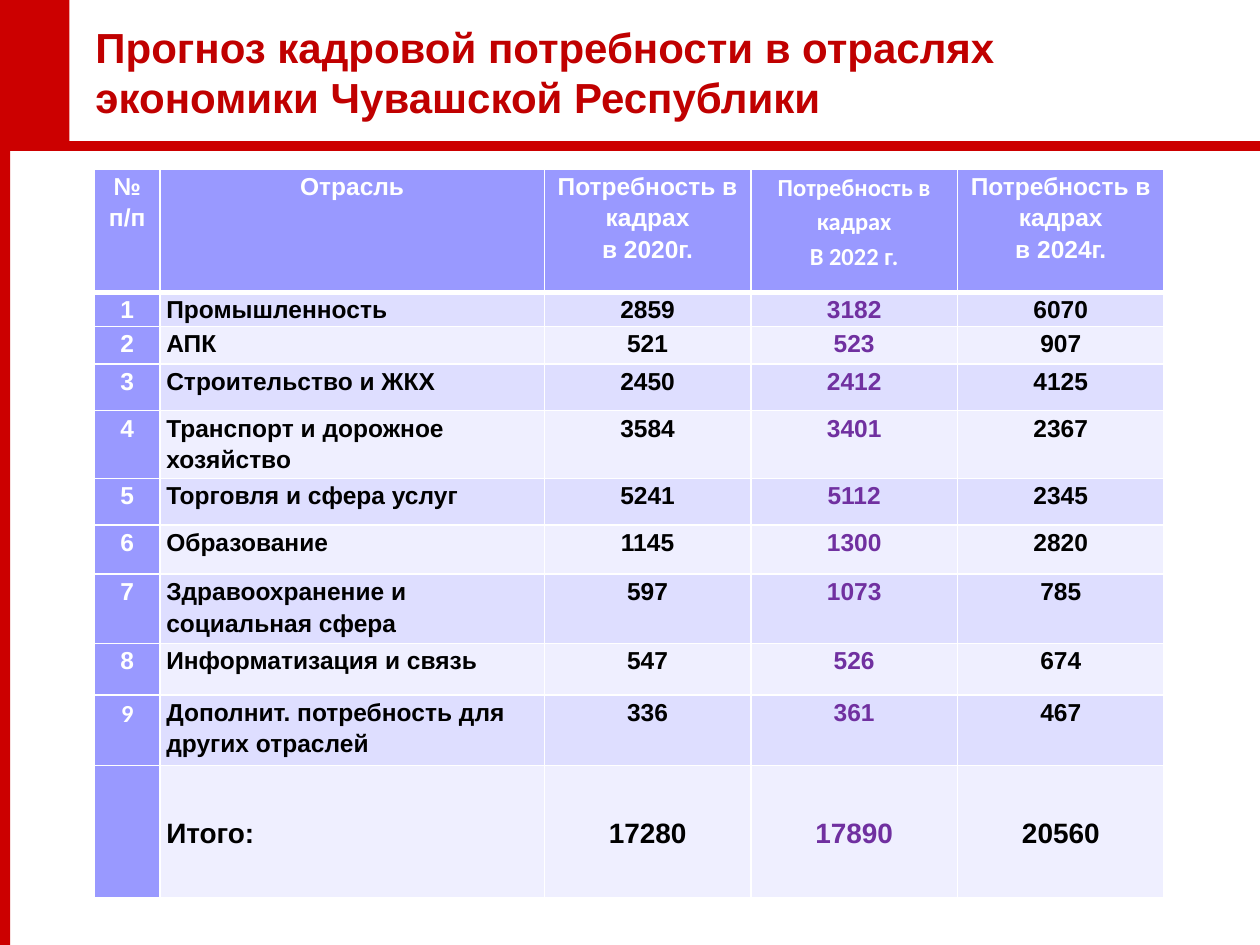
"""Build a slide with a table of staffing needs by industry."""
import pptx
import pptx.dml.color
import pptx.enum.shapes
import pptx.enum.text
import pptx.oxml
import pptx.oxml.ns
import pptx.util
from lxml import etree

inch, pt = pptx.util.Inches, pptx.util.Pt
align, anchor = pptx.enum.text.PP_ALIGN, pptx.enum.text.MSO_ANCHOR
qn = pptx.oxml.ns.qn
red, white, black, purple = "CC0000", "FFFFFF", "000000", "7030A0"


def tint(hue):
    return pptx.dml.color.RGBColor.from_string(hue)


def style(par, size, hue, face="Arial"):
    font = par.font
    font.name, font.size, font.bold = face, pt(size), True
    font.color.rgb = tint(hue)


deck = pptx.Presentation()
deck.slide_width, deck.slide_height = inch(10), inch(7.5)
wide, high = deck.slide_width, deck.slide_height
slide = deck.slides.add_slide(deck.slide_layouts[6])
shapes = slide.shapes

for w, h in [(0.08, 7.5), (0.55, 1.14)]:
    bar = shapes.add_shape(pptx.enum.shapes.MSO_SHAPE.RECTANGLE, 0, 0, inch(w), inch(h))
    bar.shadow.inherit = False
    bar.fill.solid()
    bar.fill.fore_color.rgb = tint(red)
    bar.line.fill.background()

rule = shapes.add_connector(
    pptx.enum.shapes.MSO_CONNECTOR.STRAIGHT, 0, inch(1.16), wide, inch(1.16))
rule.line.color.rgb = tint(red)
rule.line.width = pt(6)
etree.SubElement(rule._element.spPr, qn("a:effectLst"))

title = shapes.add_textbox(inch(0.66), inch(0.22), inch(8.13), inch(0.94)).text_frame
title.word_wrap = True
title.vertical_anchor = anchor.MIDDLE
title.margin_top, title.margin_bottom = 0, inch(0.24)
title.text = "Прогноз кадровой потребности в отраслях экономики Чувашской Республики"
style(title.paragraphs[0], 24, "C00000")

need = "Потребность в кадрах\n"
data = [
    ("№ п/п", "Отрасль", need + "в 2020г.", need + "В 2022 г.", need + "в 2024г."),
    (1, "Промышленность", 2859, 3182, 6070),
    (2, "АПК", 521, 523, 907),
    (3, "Строительство и ЖКХ", 2450, 2412, 4125),
    (4, "Транспорт и дорожное хозяйство", 3584, 3401, 2367),
    (5, "Торговля и сфера услуг", 5241, 5112, 2345),
    (6, "Образование", 1145, 1300, 2820),
    (7, "Здравоохранение и социальная сфера", 597, 1073, 785),
    (8, "Информатизация и связь", 547, 526, 674),
    (9, "Дополнит. потребность для других отраслей", 336, 361, 467),
    ("", "Итого:", 17280, 17890, 20560),
]
cols = [0.52, 3.05, 1.64, 1.64, 1.64]
rows = [0.98, 0.27, 0.3, 0.37, 0.51, 0.37, 0.39, 0.55, 0.41, 0.56, 1.05]
last = len(rows) - 1
table = shapes.add_table(len(rows), len(cols), inch(0.75), inch(1.34),
                         inch(sum(cols)), inch(sum(rows))).table
for c, w in enumerate(cols):
    table.columns[c].width = inch(w)

for r, line in enumerate(data):
    table.rows[r].height = inch(rows[r])
    for c, text in enumerate(line):
        cell = table.cell(r, c)
        cell.margin_left = cell.margin_right = inch(0.05)
        cell.margin_top = cell.margin_bottom = 0
        cell.vertical_anchor = anchor.MIDDLE if r == last else anchor.TOP

        edges = {"L": 1, "R": 1, "T": 3 if r == 1 else 1, "B": 3 if r == 0 else 1}
        for side, size in edges.items():
            edge = etree.SubElement(
                cell._tc.get_or_add_tcPr(), qn("a:ln" + side), w=str(pt(size)))
            fill = etree.SubElement(edge, qn("a:solidFill"))
            etree.SubElement(fill, qn("a:srgbClr"), val=white)

        head = r == 0 or c == 0
        cell.fill.solid()
        cell.fill.fore_color.rgb = tint(
            "9999FF" if head else "DEDEFF" if r % 2 else "EFEFFF")

        cell.text = str(text)
        hue = white if head else purple if c == 3 else black
        face = "Calibri" if (r, c) in [(0, 3), (9, 0)] else "Arial"
        for par in cell.text_frame.paragraphs:
            par.alignment = align.LEFT if c == 1 and r else align.CENTER
            par.line_spacing = 1.15
            style(par, 16 if r == last else 14, hue, face)

deck.save("out.pptx")
